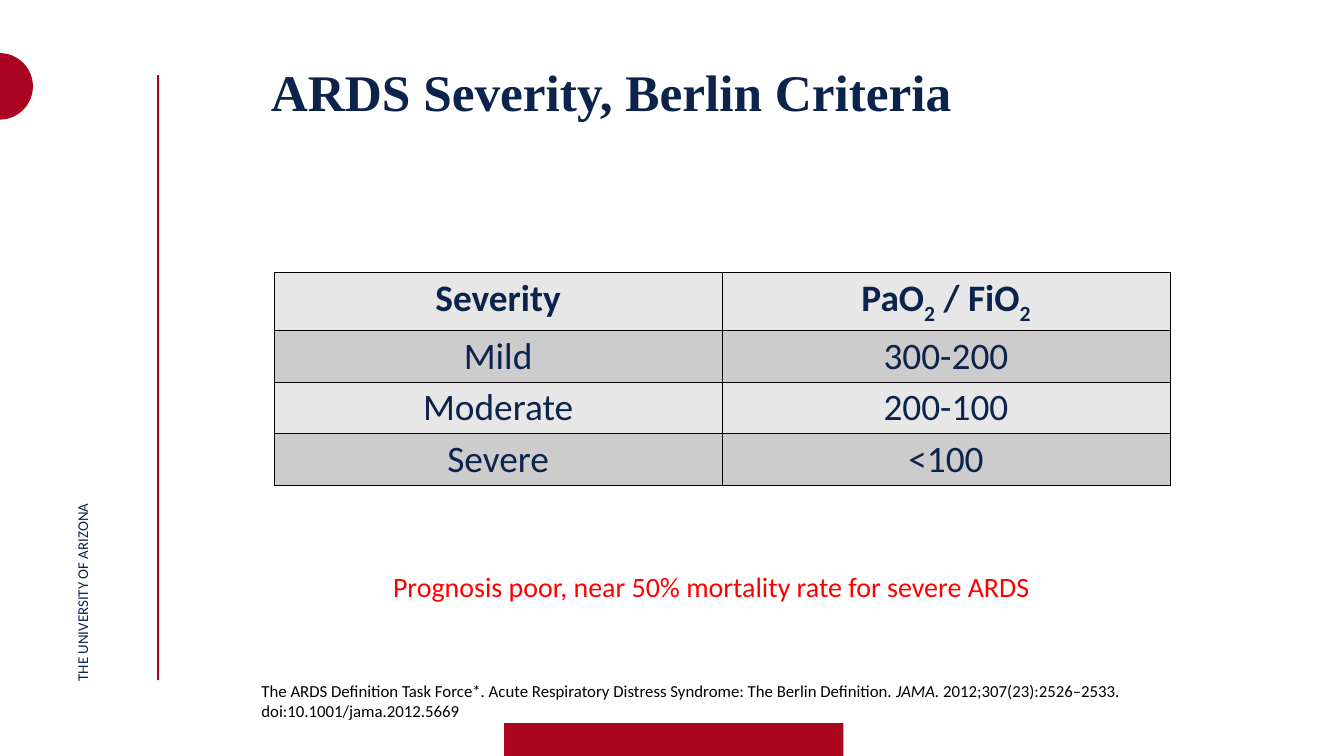
from dataclasses import dataclass

from lxml.etree import SubElement
from pptx import Presentation
from pptx.dml.color import RGBColor
from pptx.enum.shapes import MSO_SHAPE
from pptx.enum.text import MSO_ANCHOR, MSO_AUTO_SIZE, PP_ALIGN
from pptx.oxml import parse_xml
from pptx.oxml.ns import nsdecls, qn
from pptx.util import Inches, Pt


@dataclass(frozen=True)
class Theme:
    red: str = "AB0420"
    footer_red: str = "AB0520"
    navy: str = "0C234B"
    label_navy: str = "0C234A"
    warning: str = "FF0000"
    black: str = "000000"
    bands: tuple = ("E7E7E7", "CCCCCC")
    heading: str = "Times New Roman"
    body: str = "Calibri"
    title_size: int = 55
    table_size: int = 40
    warning_size: int = 30
    citation_size: int = 18
    label_size: int = 16


theme = Theme()


def style(para, size, color, name=theme.body, bold=False):
    for span in para.runs:
        span.font.size = Pt(size)
        span.font.name = name
        span.font.bold = bold
        span.font.color.rgb = RGBColor.from_string(color)


def add_text(left, top, width, height, runs, size, color):
    """Add a wrapping one-paragraph box with tight margins."""
    box = page.shapes.add_textbox(Inches(left), Inches(top), Inches(width), Inches(height))
    frame = box.text_frame
    frame.word_wrap = True
    frame.margin_left = frame.margin_right = frame.margin_bottom = 0
    frame.margin_top = Inches(0.01)
    para = frame.paragraphs[0]
    for text in runs:
        para.add_run().text = text
    style(para, size, color)
    return frame


deck = Presentation()
deck.slide_width, deck.slide_height = Inches(20), Inches(11.25)
page = deck.slides.add_slide(deck.slide_layouts[5])

# Red accents: edge circle, vertical rule, footer block
accents = [
    (MSO_SHAPE.OVAL, -0.5, 0.79, 0.99, 0.99, theme.red),
    (MSO_SHAPE.RECTANGLE, 2.34, 1.12, 0.03, 9, theme.red),
    (MSO_SHAPE.RECTANGLE, 7.5, 10.76, 5.05, 0.54, theme.footer_red),
]
for kind, left, top, width, height, color in accents:
    accent = page.shapes.add_shape(kind, Inches(left), Inches(top), Inches(width), Inches(height))
    accent.shadow.inherit = False
    accent.fill.solid()
    accent.fill.fore_color.rgb = RGBColor.from_string(color)
    accent.line.fill.background()

# Title
title = page.shapes.title
title.left, title.top = Inches(4.03), Inches(0.79)
title.width, title.height = Inches(11.22), Inches(1.67)
frame = title.text_frame
frame.text = "ARDS Severity, Berlin Criteria"
frame.auto_size = MSO_AUTO_SIZE.NONE
frame.vertical_anchor = MSO_ANCHOR.TOP
frame.margin_left = frame.margin_right = frame.margin_bottom = 0
frame.margin_top = Inches(0.1)
frame.paragraphs[0].alignment = PP_ALIGN.LEFT
style(frame.paragraphs[0], theme.title_size, theme.navy, theme.heading, bold=True)

# Citation and side label
citation = add_text(3.89, 10.12, 14.77, 0.8, [
    "The ARDS Definition Task Force*. Acute Respiratory Distress Syndrome: The Berlin Definition. ",
    "JAMA.",
    " 2012;307(23):2526–2533. doi:10.1001/jama.2012.5669",
], theme.citation_size, theme.black)
citation.paragraphs[0].runs[1].font.italic = True

label = add_text(1.09, 3.88, 0.27, 6.26, ["THE UNIVERSITY OF ARIZONA"],
                 theme.label_size, theme.label_navy)
label._txBody.find(qn("a:bodyPr")).set("vert", "vert270")

# Severity table; each cell is a list of runs, and a lone "2" is a subscript
rows = [
    (["Severity"], ["PaO", "2", " / FiO", "2"]),
    (["Mild"], ["300-200"]),
    (["Moderate"], ["200-100"]),
    (["Severe"], ["<100"]),
]
table = page.shapes.add_table(len(rows), 2, Inches(4.08), Inches(4.06),
                              Inches(13.33), Inches(3.07)).table
for r, row in enumerate(rows):
    for c, runs in enumerate(row):
        cell = table.cell(r, c)
        cell.fill.solid()
        cell.fill.fore_color.rgb = RGBColor.from_string(theme.bands[r % 2])
        para = cell.text_frame.paragraphs[0]
        para.alignment = PP_ALIGN.CENTER
        for text in runs:
            span = para.add_run()
            span.text = text
            if text == "2":
                span.font._element.set("baseline", "-25000")
        style(para, theme.table_size, theme.navy, bold=r == 0)
        properties = cell._tc.get_or_add_tcPr()
        for position, side in enumerate(("lnL", "lnR", "lnT", "lnB")):
            border = parse_xml(f'<a:{side} {nsdecls("a")} w="{Pt(1)}"/>')
            fill = SubElement(border, qn("a:solidFill"))
            SubElement(fill, qn("a:srgbClr")).set("val", theme.black)
            properties.insert(position, border)

# Prognosis
prognosis = add_text(5.75, 8.42, 10.75, 0.61,
                     ["Prognosis poor, near 50% mortality rate for severe ARDS"],
                     theme.warning_size, theme.warning)
prognosis.margin_left = prognosis.margin_right = Inches(0.1)
prognosis.margin_top = prognosis.margin_bottom = Inches(0.05)
prognosis.auto_size = MSO_AUTO_SIZE.SHAPE_TO_FIT_TEXT

deck.save("out.pptx")
